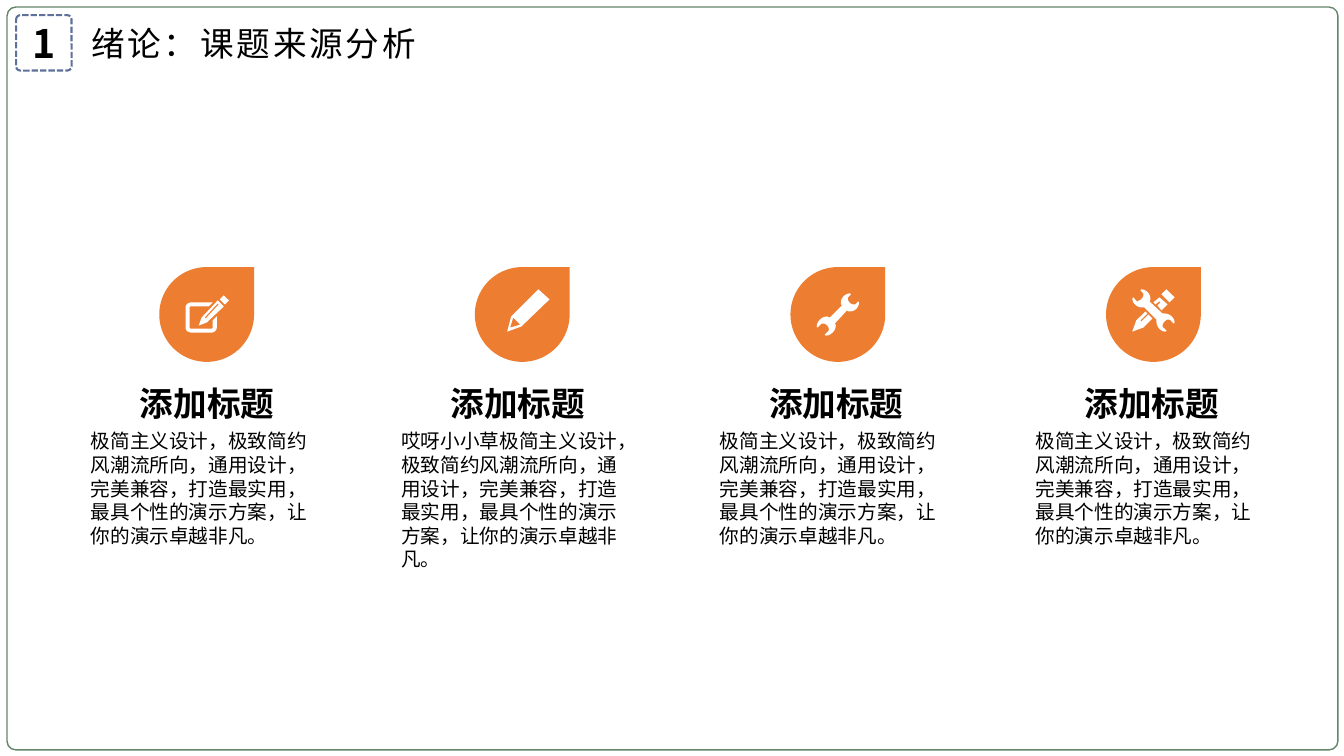
from lxml.etree import SubElement
from pptx import Presentation
from pptx.dml.color import RGBColor
from pptx.enum.dml import MSO_LINE
from pptx.enum.shapes import MSO_SHAPE
from pptx.enum.text import MSO_ANCHOR, MSO_AUTO_SIZE, PP_ALIGN
from pptx.oxml.ns import qn
from pptx.util import Inches, Pt

FONT = "Noto Sans CJK SC"
COLORS = {"border": "63866A", "badge": "5E719B", "drop": "ED7D31",
          "icon": "FFFFFF", "text": "000000"}

# Content
TITLE = "绪论：课题来源分析"
HEADING = "添加标题"
BODY = "极简主义设计，极致简约风潮流所向，通用设计，完美兼容，打造最实用，最具个性的演示方案，让你的演示卓越非凡。"

# Icon parts are lists of contours, in hundredths of an inch from the drop's
# corner: a pair is a straight step, six numbers are a Bezier curve.
EDIT = [
    [[(53, 60), (53, 61, 52, 61, 52, 61), (32, 61), (31, 61, 30, 61, 30, 60),
      (30, 40), (30, 39, 31, 39, 32, 39), (49, 39), (53, 35), (32, 35),
      (29, 35, 26, 37, 26, 40), (26, 60), (26, 63, 29, 65, 32, 65), (52, 65),
      (54, 65, 57, 63, 57, 60), (57, 49), (53, 53)]],
    [[(64, 39), (58, 33), (42, 50), (39, 58), (47, 55)],
     [(46, 51), (45, 50), (58, 36), (59, 37)]],
    [[(60, 32), (65, 37), (69, 33), (64, 28)]],
]
PENCIL = [
    [[(74, 32), (63, 22), (36, 49), (32, 64), (46, 59)],
     [(35, 60), (38, 50), (45, 57)]],
]
WRENCH = [
    [[(67, 34), (64, 38, 64, 37, 62, 37), (60, 37, 57, 34, 57, 32),
      (57, 30, 56, 31, 60, 27), (59, 26), (55, 26, 50, 30, 50, 35),
      (50, 36, 50, 37, 51, 38), (39, 50), (38, 50, 37, 49, 36, 49),
      (31, 49, 26, 54, 26, 59), (27, 60), (31, 56, 30, 56, 33, 56),
      (35, 56, 38, 59, 38, 61), (38, 64, 38, 63, 34, 67), (35, 68),
      (40, 68, 45, 63, 45, 58), (45, 57, 44, 56, 44, 56), (56, 43),
      (57, 44, 58, 44, 59, 44), (64, 44, 68, 40, 68, 35)]],
]
TOOLS = [
    [[(42, 47), (35, 54), (34, 53), (41, 46), (39, 44), (30, 53), (26, 64),
      (37, 60), (46, 51)]],
    [[(49, 37), (53, 34), (54, 35), (51, 38), (55, 43), (61, 37), (53, 30),
      (47, 35)]],
    [[(60, 22), (55, 27), (63, 35), (68, 30)]],
    [[(58, 46), (56, 46), (43, 34), (44, 33, 44, 32, 44, 31),
      (44, 27, 40, 22, 35, 22), (34, 23), (38, 27, 37, 26, 37, 28),
      (37, 30, 34, 33, 33, 33), (32, 33, 32, 34, 31, 34),
      (30, 34, 30, 33, 27, 30), (26, 31), (26, 36, 31, 40, 35, 40), (38, 40),
      (50, 52), (50, 54), (50, 59, 54, 64, 59, 64), (60, 63),
      (56, 59, 56, 60, 56, 58), (56, 55, 60, 52, 61, 52), (62, 52),
      (64, 52, 64, 53, 67, 56), (68, 55), (68, 50, 63, 46, 58, 46)]],
]

# Icon, text left, body height, body text
COLUMNS = [
    (EDIT, 0.9, 1.18, BODY),
    (PENCIL, 3.98, 1.41, "哎呀小小草" + BODY),
    (WRENCH, 7.14, 1.18, BODY),
    (TOOLS, 10.27, 1.18, BODY),
]
DROP_LEFT, DROP_TOP, DROP_SIZE, DROP_PITCH = 1.58, 2.65, 0.94, 3.13


def color(name):
    return RGBColor.from_string(COLORS[name])


def write(shape, text, size, bold=False, align=PP_ALIGN.LEFT,
          anchor=MSO_ANCHOR.TOP, inset=0, spacing=None):
    frame = shape.text_frame
    frame.word_wrap = True
    frame.auto_size = MSO_AUTO_SIZE.NONE
    frame.vertical_anchor = anchor
    frame.margin_left = frame.margin_right = Inches(inset)
    frame.margin_top = frame.margin_bottom = Inches(inset / 2)
    paragraph = frame.paragraphs[0]
    paragraph.alignment = align
    run = paragraph.add_run()
    run.text = text
    run.font.size = Pt(size)
    run.font.bold = bold
    run.font.name = FONT
    run.font.color.rgb = color("text")
    properties = run.font._element
    SubElement(properties, qn("a:ea")).set("typeface", FONT)
    if spacing:
        properties.set("spc", str(spacing * 100))


def add_outline(slide, box, radius, line, width):
    outline = slide.shapes.add_shape(MSO_SHAPE.ROUNDED_RECTANGLE, *map(Inches, box))
    outline.adjustments[0] = radius
    outline.shadow.inherit = False
    outline.fill.background()
    outline.line.color.rgb = color(line)
    outline.line.width = Pt(width)
    return outline


def paint(shape, fill):
    shape.shadow.inherit = False
    shape.fill.solid()
    shape.fill.fore_color.rgb = color(fill)
    shape.line.fill.background()


def flatten(contour, left, top, steps=6):
    points = [contour[0]]
    for step in contour[1:]:
        if len(step) == 2:
            points.append(step)
            continue
        nodes = [points[-1], step[:2], step[2:4], step[4:]]
        for i in range(1, steps + 1):
            t = i / steps
            weights = ((1 - t) ** 3, 3 * t * (1 - t) ** 2, 3 * t * t * (1 - t), t ** 3)
            points.append(tuple(sum(w * node[axis] for w, node in zip(weights, nodes))
                                for axis in (0, 1)))
    return [(Inches(left + x / 100), Inches(top + y / 100)) for x, y in points]


def add_icon_part(slide, contours, left, top):
    outlines = [flatten(contour, left, top) for contour in contours]
    builder = slide.shapes.build_freeform(*outlines[0][0])
    for i, points in enumerate(outlines):
        if i:
            builder.move_to(*points[0])
        builder.add_line_segments(points[1:], close=True)
    paint(builder.convert_to_shape(), "icon")


def add_text(slide, box, text, size, **style):
    write(slide.shapes.add_textbox(*map(Inches, box)), text, size, **style)


def main():
    deck = Presentation()
    deck.slide_width, deck.slide_height = Inches(13.33), Inches(7.5)
    slide = deck.slides.add_slide(deck.slide_layouts[5])

    # Border, number badge and title
    add_outline(slide, (0.07, 0.07, 13.2, 7.37), 0.012, "border", 1)
    badge = add_outline(slide, (0.16, 0.15, 0.55, 0.55), 0.076, "badge", 1.5)
    badge.line.dash_style = MSO_LINE.SQUARE_DOT
    write(badge, "1", 28, bold=True, align=PP_ALIGN.CENTER, anchor=MSO_ANCHOR.MIDDLE)
    title = slide.shapes.title
    title.left, title.top, title.width, title.height = map(Inches, (0.72, 0.15, 3.59, 0.55))
    write(title, TITLE, 24, align=PP_ALIGN.CENTER, anchor=MSO_ANCHOR.MIDDLE,
          inset=0.1, spacing=2)

    # Four columns: drop with icon, heading, body
    for i, (icon, text_left, body_height, body) in enumerate(COLUMNS):
        drop_left = DROP_LEFT + i * DROP_PITCH
        drop = slide.shapes.add_shape(MSO_SHAPE.TEAR, Inches(drop_left), Inches(DROP_TOP),
                                      Inches(DROP_SIZE), Inches(DROP_SIZE))
        paint(drop, "drop")
        for contours in icon:
            add_icon_part(slide, contours, drop_left, DROP_TOP)
        add_text(slide, (text_left + 0.41, 3.8, 1.49, 0.4), HEADING, 24,
                 bold=True, align=PP_ALIGN.CENTER)
        add_text(slide, (text_left, 4.26, 2.29, body_height), body, 14)

    deck.save("out.pptx")


if __name__ == "__main__":
    main()
